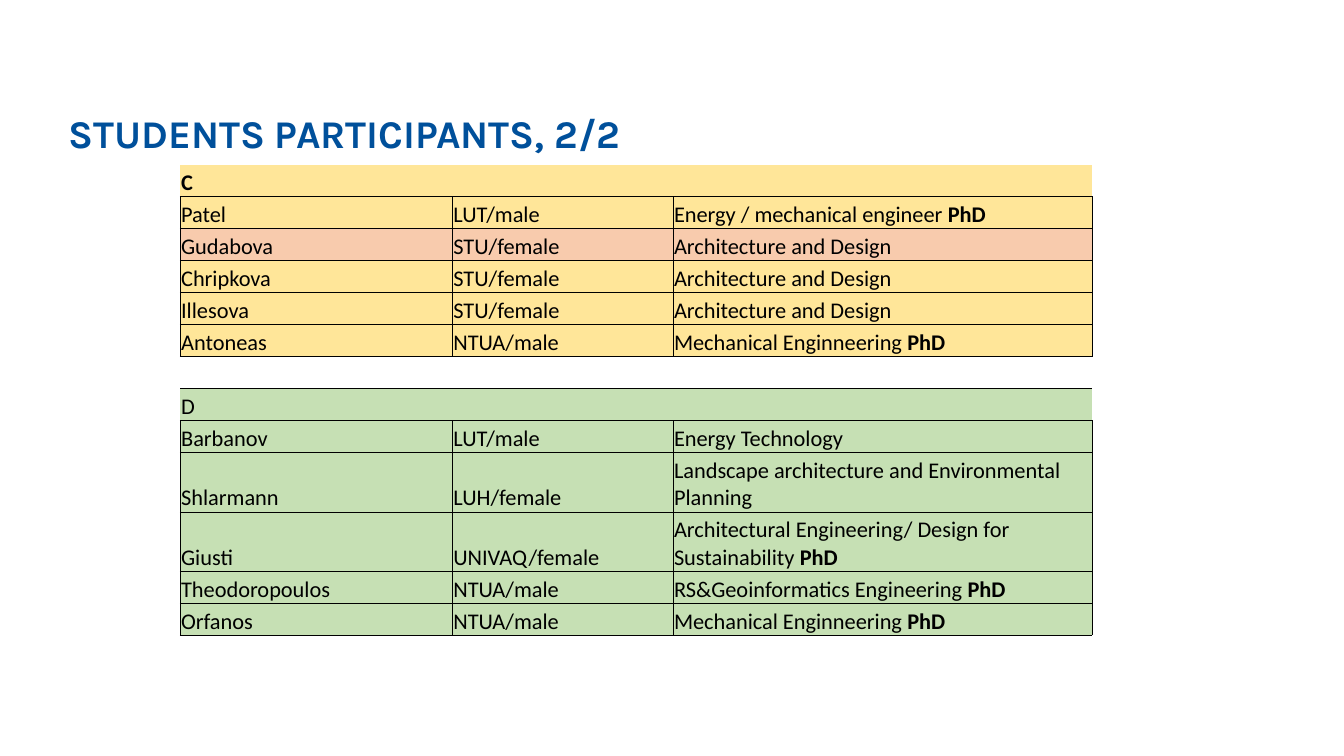
from dataclasses import dataclass

from lxml import etree
from pptx import Presentation
from pptx.dml.color import RGBColor
from pptx.enum.text import MSO_ANCHOR, MSO_AUTO_SIZE, PP_ALIGN
from pptx.oxml.ns import qn
from pptx.util import Pt

BOTTOM, MIDDLE = MSO_ANCHOR.BOTTOM, MSO_ANCHOR.MIDDLE
LEFT = PP_ALIGN.LEFT
NO_AUTOFIT = MSO_AUTO_SIZE.NONE
TITLE_ONLY = 5
NO_STYLE = "{2D5ABB26-0587-4C30-8999-92F81FD0307C}"


@dataclass(frozen=True)
class Theme:
    title: str = "00509B"
    ink: str = "000000"
    yellow: str = "FFE699"
    peach: str = "F8CBAD"
    green: str = "C6E0B4"
    title_font: str = "Karla"
    table_font: str = "Calibri"
    title_size: float = 28
    table_size: float = 16
    border: float = 0.5


THEME = Theme()


@dataclass(frozen=True)
class Row:
    """A table row; the sides name the cell edges that carry a line."""
    texts: tuple[str, str, str] = ("", "", "")
    fill: str | None = None
    sides: str = "LRTB"
    height: float = 22.86
    bold: bool = False
    phd: bool = False


def group(letter: str, fill: str, bold: bool = False) -> Row:
    return Row((letter, "", ""), fill, "B", bold=bold)


YELLOW, PEACH, GREEN = THEME.yellow, THEME.peach, THEME.green
TALL = 42.4
COLUMNS = (194.5, 157.6, 299.2)
ROWS = (
    group("C", YELLOW, bold=True),
    Row(("Patel", "LUT/male", "Energy / mechanical engineer "), YELLOW, phd=True),
    Row(("Gudabova", "STU/female", "Architecture and Design"), PEACH),
    Row(("Chripkova", "STU/female", "Architecture and Design"), YELLOW),
    Row(("Illesova", "STU/female", "Architecture and Design"), YELLOW),
    Row(("Antoneas", "NTUA/male", "Mechanical Enginneering "), YELLOW, phd=True),
    Row(sides="T"),
    group("D", GREEN),
    Row(("Barbanov", "LUT/male", "Energy Technology"), GREEN),
    Row(("Shlarmann", "LUH/female",
         "Landscape architecture and Environmental Planning"), GREEN, height=TALL),
    Row(("Giusti", "UNIVAQ/female",
         "Architectural Engineering/ Design for Sustainability "),
        GREEN, height=TALL, phd=True),
    Row(("Theodoropoulos", "NTUA/male", "RS&Geoinformatics Engineering "),
        GREEN, phd=True),
    Row(("Orfanos", "NTUA/male", "Mechanical Enginneering "), GREEN, phd=True),
)


def set_all(target, values: dict) -> None:
    for name, value in values.items():
        setattr(target, name, value)


def add_run(p, text: str, font: str, size: float, color: str, bold: bool) -> None:
    r = p.add_run()
    r.text = text
    set_all(r.font, {"name": font, "size": Pt(size), "bold": bold})
    r.font.color.rgb = RGBColor.from_string(color)


def add_borders(cell, sides: str) -> None:
    tc_pr = cell._tc.get_or_add_tcPr()
    for i, side in enumerate(sides):
        ln = etree.Element(qn(f"a:ln{side}"), w=str(Pt(THEME.border)))
        fill = etree.SubElement(ln, qn("a:solidFill"))
        etree.SubElement(fill, qn("a:srgbClr"), val=THEME.ink)
        tc_pr.insert(i, ln)


def fill_cell(cell, row: Row, text: str, phd: bool) -> None:
    set_all(cell, {"margin_left": Pt(0.7), "margin_right": Pt(0.7),
                   "margin_top": Pt(0.7), "margin_bottom": Pt(0),
                   "vertical_anchor": BOTTOM})
    if row.fill:
        cell.fill.solid()
        cell.fill.fore_color.rgb = RGBColor.from_string(row.fill)
    else:
        cell.fill.background()
    add_borders(cell, row.sides)
    p = cell.text_frame.paragraphs[0]
    p.font.size = Pt(THEME.table_size)
    parts = [(text, row.bold)] if text else []
    if phd:
        parts.append(("PhD", True))
    for part, bold in parts:
        add_run(p, part, THEME.table_font, THEME.table_size, THEME.ink, bold)


def add_title(s, text: str) -> None:
    sp = s.shapes.title
    set_all(sp, {"left": Pt(41.8), "top": Pt(61.2),
                 "width": Pt(852.5), "height": Pt(72)})
    tf = sp.text_frame
    set_all(tf, {"word_wrap": True, "auto_size": NO_AUTOFIT,
                 "vertical_anchor": MIDDLE})
    p = tf.paragraphs[0]
    set_all(p, {"alignment": LEFT, "line_spacing": 0.9})
    add_run(p, text, THEME.title_font, THEME.title_size, THEME.title, True)


def add_participants(s) -> None:
    frame = s.shapes.add_table(
        len(ROWS), len(COLUMNS), Pt(128.7), Pt(117.6),
        Pt(sum(COLUMNS)), Pt(sum(row.height for row in ROWS)))
    table = frame.table
    set_all(table, {"first_row": False, "horz_banding": False})
    table._tbl.tblPr.find(qn("a:tableStyleId")).text = NO_STYLE
    for column, width in zip(table.columns, COLUMNS):
        column.width = Pt(width)
    for i, row in enumerate(ROWS):
        table.rows[i].height = Pt(row.height)
        for j, text in enumerate(row.texts):
            last = j == len(COLUMNS) - 1
            fill_cell(table.cell(i, j), row, text, row.phd and last)


def main() -> None:
    prs = Presentation()
    set_all(prs, {"slide_width": Pt(960), "slide_height": Pt(540)})
    s = prs.slides.add_slide(prs.slide_layouts[TITLE_ONLY])
    # Heading
    add_title(s, "STUDENTS PARTICIPANTS, 2/2")
    # Groups C and D
    add_participants(s)
    prs.save("out.pptx")


if __name__ == "__main__":
    main()
